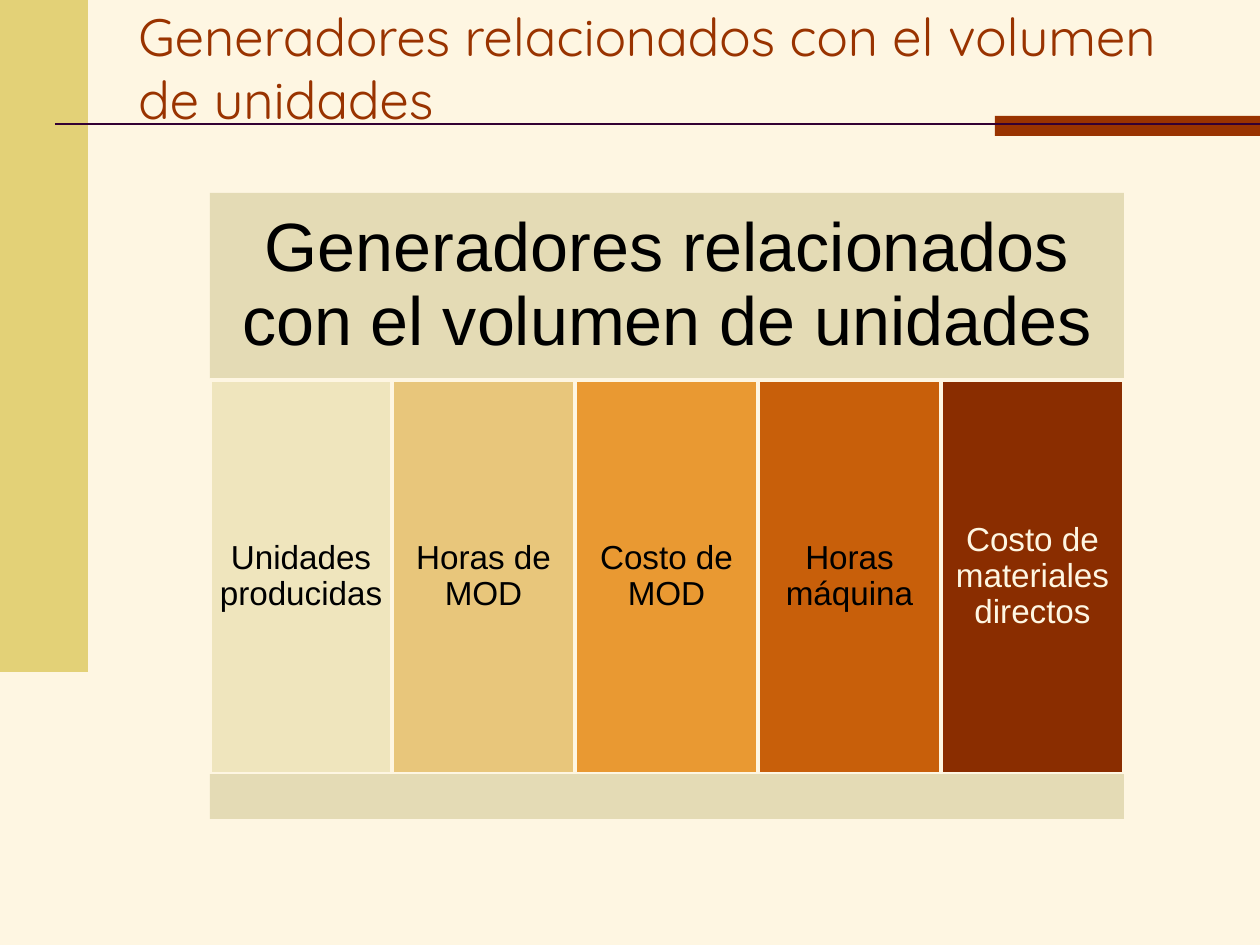
from dataclasses import dataclass

from lxml import etree
from pptx import Presentation
from pptx import util as u
from pptx.dml.color import RGBColor
from pptx.enum import shapes, text
from pptx.oxml import ns

SCALE = 914400 / 126  # EMU in one px


def px(n):
    return u.Emu(round(n * SCALE))


def rgb(code):
    return RGBColor.from_string(code)


@dataclass(frozen=True)
class Theme:
    paper: str = "FEF6E2"
    band: str = "E3D177"
    rust: str = "993300"
    rule: str = "330033"
    sand: str = "E4DBB5"
    ink: str = "000000"
    cream: str = "EFE5BD"
    wheat: str = "E8C67B"
    amber: str = "E99932"
    copper: str = "C85F0A"
    brick: str = "8A2D00"
    head_font: str = "Quicksand"
    body_font: str = "Arial"
    title: int = 30
    head: int = 39
    label: int = 19


class Deck:
    def __init__(self, theme):
        self.theme = theme
        self.prs = Presentation()
        self.prs.slide_width, self.prs.slide_height = px(1260), px(945)
        self.slide = self.prs.slides.add_slide(self.prs.slide_layouts[6])
        fill = self.slide.background.fill
        fill.solid()
        fill.fore_color.rgb = rgb(theme.paper)

    def rect(self, x, y, w, h, fill, edge=None):
        box = self.slide.shapes.add_shape(
            shapes.MSO_SHAPE.RECTANGLE, px(x), px(y), px(w), px(h))
        box.shadow.inherit = False
        box.fill.solid()
        box.fill.fore_color.rgb = rgb(fill)
        if edge:
            box.line.color.rgb = rgb(edge)
            box.line.width = u.Pt(2)
        else:
            box.line.fill.background()
        return box

    def rule(self, x1, x2, y, color):
        line = self.slide.shapes.add_connector(
            shapes.MSO_CONNECTOR.STRAIGHT, px(x1), px(y), px(x2), px(y))
        line.line.color.rgb = rgb(color)
        line.line.width = u.Pt(1.5)
        etree.SubElement(line._element.spPr, ns.qn("a:effectLst"))

    def title(self, x, y, w, h, words):
        box = self.slide.shapes.add_textbox(px(x), px(y), px(w), px(h))
        t = self.theme
        self.style(box, words, t.title, t.head_font, t.rust)

    def label(self, box, words, size, color, inset):
        frame = box.text_frame
        frame.margin_left = frame.margin_right = px(inset)
        frame.margin_top = frame.margin_bottom = px(inset)
        self.style(box, words, size, self.theme.body_font, color)
        para = frame.paragraphs[0]
        para.alignment = text.PP_ALIGN.CENTER
        para.line_spacing = 0.9

    def style(self, box, words, size, font, color):
        frame = box.text_frame
        frame.word_wrap = True
        frame.vertical_anchor = text.MSO_ANCHOR.MIDDLE
        frame.text = words
        face = frame.paragraphs[0].runs[0].font
        face.size, face.name = u.Pt(size), font
        face.color.rgb = rgb(color)


def main():
    t = Theme()
    deck = Deck(t)
    topic = "Generadores relacionados con el volumen de unidades"

    # Side band, accent bar and rule
    deck.rect(0, 0, 88, 672, t.band)
    deck.rect(995, 116, 265, 20, t.rust)
    deck.rule(55, 1260, 124, t.rule)

    deck.title(126, 31, 1092, 73, topic)

    # Table header
    left, top, width = 210, 193, 914
    head = deck.rect(left, top, width, 187, t.sand)
    deck.label(head, topic, t.head, t.ink, 20)

    # Five equal columns
    cols = [
        ("Unidades producidas", t.cream, t.ink),
        ("Horas de MOD", t.wheat, t.ink),
        ("Costo de MOD", t.amber, t.ink),
        ("Horas máquina", t.copper, t.ink),
        ("Costo de materiales directos", t.brick, t.paper),
    ]
    for i, (words, fill, color) in enumerate(cols):
        x = left + width * i // len(cols)
        end = left + width * (i + 1) // len(cols)
        cell = deck.rect(x, 380, end - x, 394, fill, t.paper)
        deck.label(cell, words, t.label, color, 9)

    # Table foot
    deck.rect(left, 774, width, 45, t.sand)

    deck.prs.save("out.pptx")


if __name__ == "__main__":
    main()
